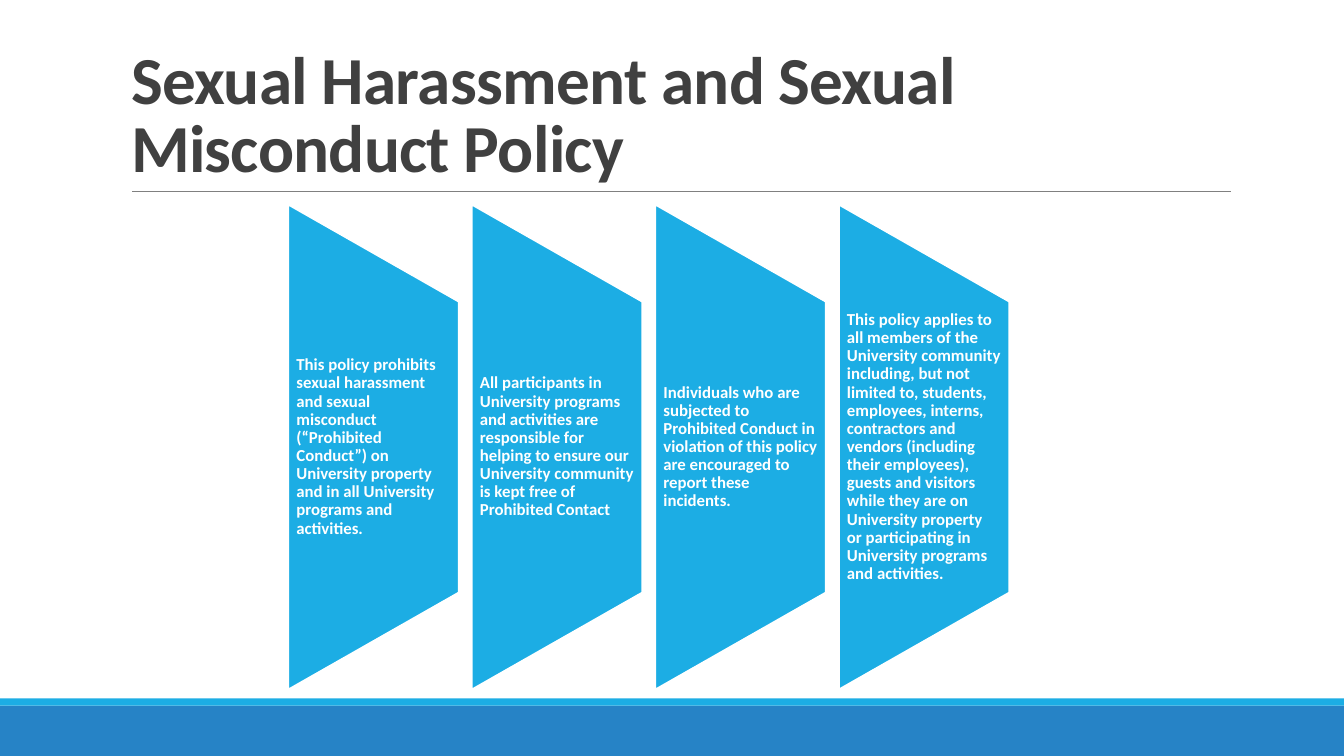
from lxml.etree import SubElement
from pptx import Presentation
from pptx.dml.color import RGBColor
from pptx.enum.shapes import MSO_CONNECTOR, MSO_SHAPE
from pptx.enum.text import MSO_ANCHOR, MSO_AUTO_SIZE, PP_ALIGN
from pptx.oxml.ns import qn
from pptx.util import Inches, Pt

COLORS = {
    "sky": "1CADE4",
    "blue": "2683C6",
    "rule": "808080",
    "title": "404040",
    "white": "FFFFFF",
}
FONT = "Calibri"
SLIDE_WIDTH, SLIDE_HEIGHT = 13.33, 7.5

# Panel grid: four equal columns, text in the middle three fifths
PANEL_LEFT, PANEL_TOP = 2.86, 2.03
PANEL_WIDTH, PANEL_HEIGHT = 1.69, 4.81
PANEL_PITCH = 1.82
TEXT_SHARE = 0.6

POLICY_POINTS = [
    "This policy prohibits sexual harassment and sexual misconduct "
    "(“Prohibited Conduct”) on University property and in all "
    "University programs and activities.",
    "All participants in University programs and activities are responsible "
    "for helping to ensure our University community is kept free "
    "of Prohibited Contact",
    "Individuals who are subjected to Prohibited Conduct in violation of this "
    "policy are encouraged to report these incidents.",
    "This policy applies to all members of the University community including, "
    "but not limited to, students, employees, interns, contractors and vendors "
    "(including their employees), guests and visitors while they are on "
    "University property or participating in University programs and activities.",
]


def color(name):
    return RGBColor.from_string(COLORS[name])


def box(left, top, width, height):
    return [Inches(length) for length in (left, top, width, height)]


def add_filled(slide, kind, bounds, fill):
    shape = slide.shapes.add_shape(kind, *box(*bounds))
    shape.shadow.inherit = False
    shape.fill.solid()
    shape.fill.fore_color.rgb = color(fill)
    shape.line.fill.background()
    return shape


def style_text(frame, text, size, font_color, spacing, after):
    frame.word_wrap = True
    frame.auto_size = MSO_AUTO_SIZE.NONE
    frame.text = text
    paragraph = frame.paragraphs[0]
    paragraph.alignment = PP_ALIGN.LEFT
    paragraph.line_spacing = spacing
    paragraph.space_after = Pt(after)
    paragraph.font.name = FONT
    paragraph.font.size = Pt(size)
    paragraph.font.bold = True
    paragraph.font.color.rgb = color(font_color)
    return paragraph


def add_title(slide, text):
    title = slide.shapes.title
    title.left, title.top, title.width, title.height = box(1.2, 0.31, 11, 1.59)
    title.text_frame.vertical_anchor = MSO_ANCHOR.BOTTOM
    paragraph = style_text(title.text_frame, text, 48, "title", 0.85, 6)
    # Letter spacing in hundredths of a point
    paragraph.runs[0].font._element.set("spc", "-50")


def add_rule(slide, left, right, y):
    rule = slide.shapes.add_connector(
        MSO_CONNECTOR.STRAIGHT, Inches(left), Inches(y), Inches(right), Inches(y))
    rule.line.color.rgb = color("rule")
    rule.line.width = Pt(0.5)
    SubElement(rule._element.spPr, qn("a:effectLst"))


def add_panel(slide, column, text):
    left = PANEL_LEFT + column * PANEL_PITCH
    middle = PANEL_TOP + PANEL_HEIGHT / 2

    # The trapezoid lies on its side, so its box is turned about its centre
    trapezoid = add_filled(
        slide, MSO_SHAPE.FLOWCHART_MANUAL_OPERATION,
        (left + (PANEL_WIDTH - PANEL_HEIGHT) / 2, middle - PANEL_WIDTH / 2,
         PANEL_HEIGHT, PANEL_WIDTH), "sky")
    trapezoid.rotation = 270
    trapezoid.line.color.rgb = color("white")
    trapezoid.line.width = Pt(1.25)

    # Upright text over the trapezoid
    text_height = PANEL_HEIGHT * TEXT_SHARE
    point = slide.shapes.add_textbox(
        *box(left, middle - text_height / 2, PANEL_WIDTH, text_height))
    frame = point.text_frame
    frame.margin_left = frame.margin_right = Inches(0.08)
    frame.margin_top = frame.margin_bottom = 0
    frame.vertical_anchor = MSO_ANCHOR.MIDDLE
    style_text(frame, text, 12, "white", 0.9, 4.2)


def main():
    deck = Presentation()
    deck.slide_width, deck.slide_height = Inches(SLIDE_WIDTH), Inches(SLIDE_HEIGHT)
    slide = deck.slides.add_slide(deck.slide_layouts[5])

    # Footer bands
    add_filled(slide, MSO_SHAPE.RECTANGLE, (0, 7, SLIDE_WIDTH, 0.5), "blue")
    add_filled(slide, MSO_SHAPE.RECTANGLE, (0, 6.93, SLIDE_WIDTH, 0.07), "sky")

    # Heading
    add_rule(slide, 1.31, 12.21, 1.9)
    add_title(slide, "Sexual Harassment and Sexual Misconduct Policy")

    # Policy panels
    for column, text in enumerate(POLICY_POINTS):
        add_panel(slide, column, text)

    deck.save("out.pptx")


if __name__ == "__main__":
    main()
